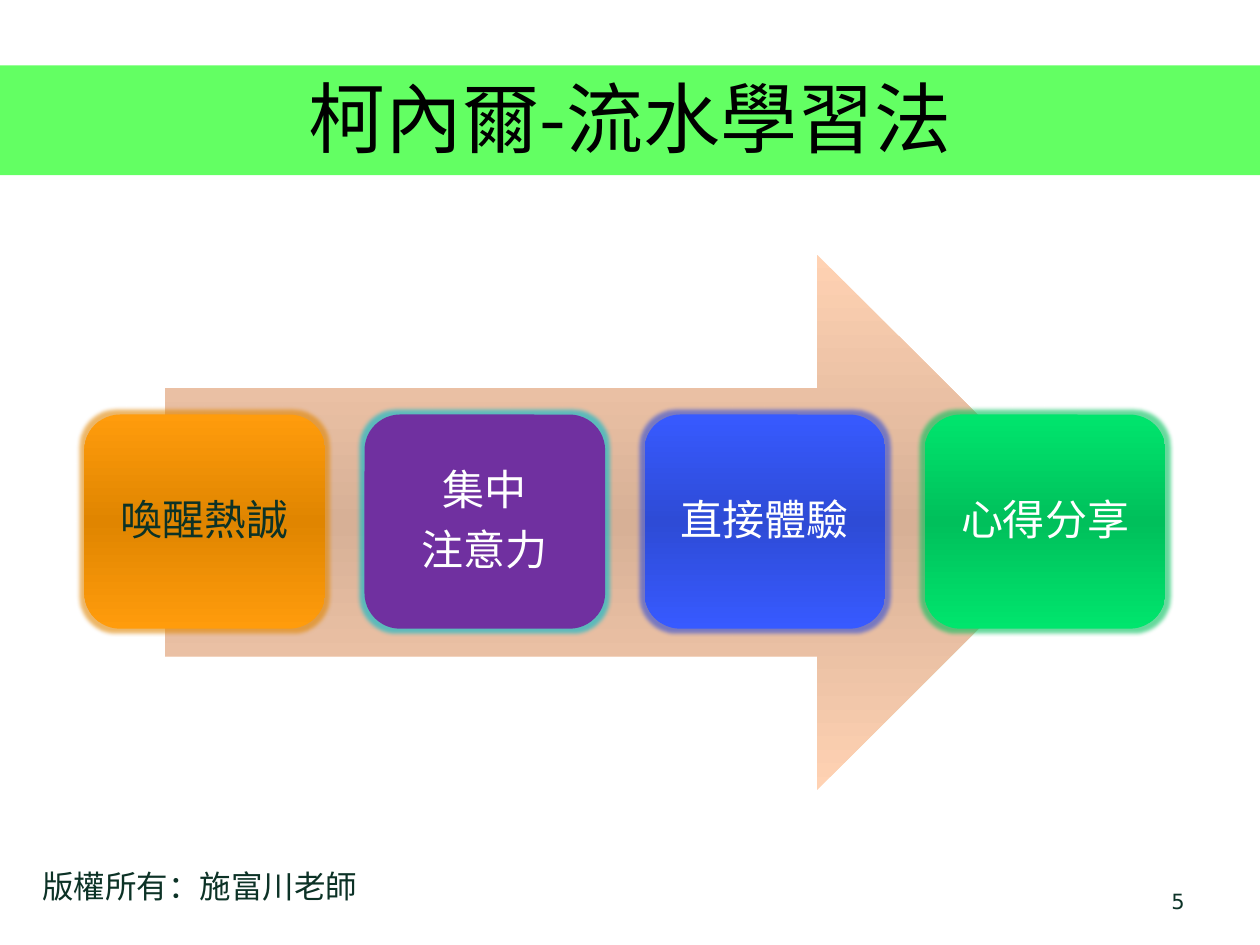
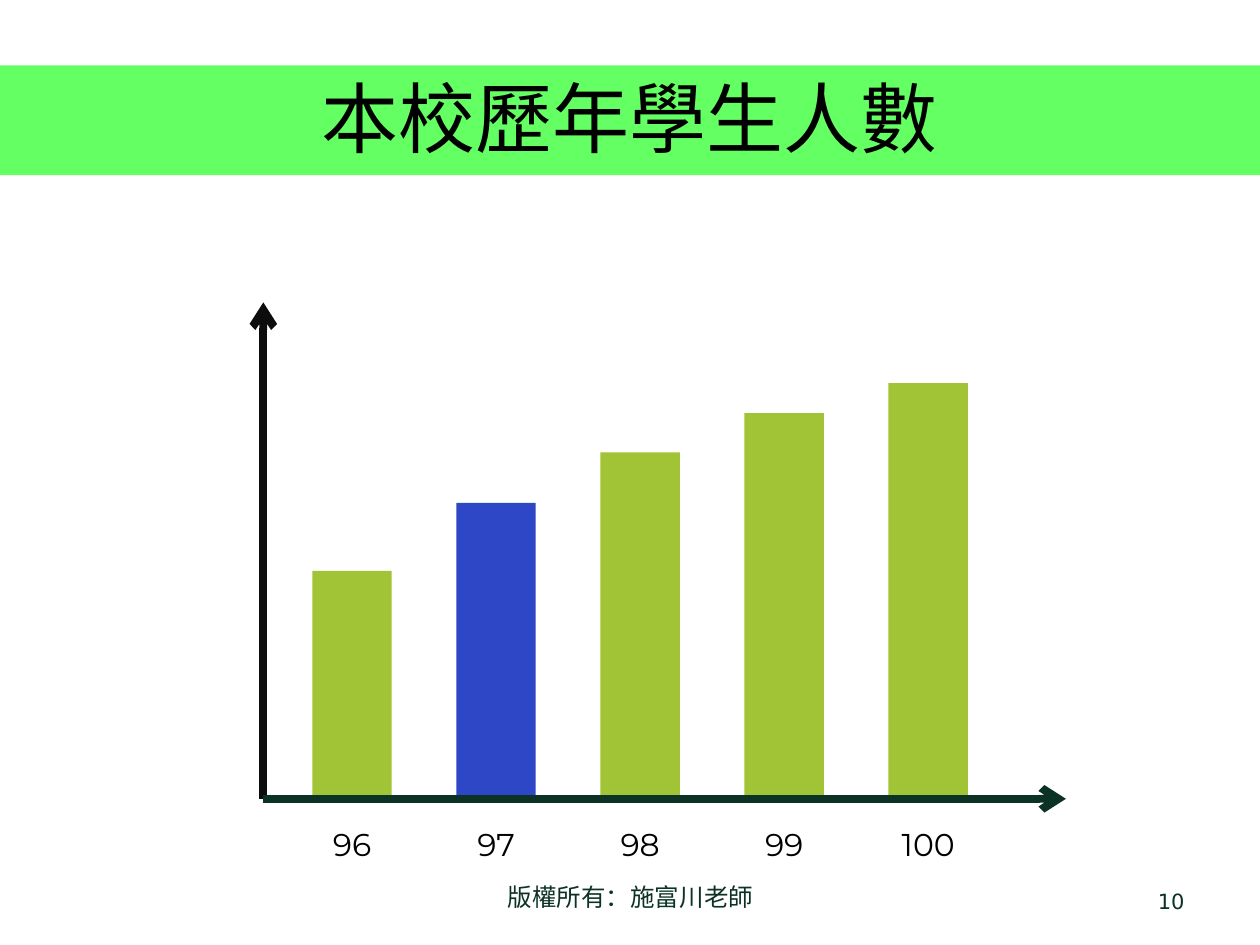
"""Build two slides: a four-step learning flow and a student head-count graph."""
import copy

import lxml.etree
import pptx
import pptx.dml.color
import pptx.enum.shapes
import pptx.enum.text
import pptx.oxml.ns
import pptx.util

RGBColor = pptx.dml.color.RGBColor
Shape = pptx.enum.shapes.MSO_SHAPE
Align = pptx.enum.text.PP_ALIGN
Anchor = pptx.enum.text.MSO_ANCHOR
qn = pptx.oxml.ns.qn

COLUMNS, ROWS = 100, 75
BLACK = RGBColor(0x00, 0x00, 0x00)
WHITE = RGBColor(0xFF, 0xFF, 0xFF)
INK = RGBColor(0x0C, 0x32, 0x26)
AXIS_BLACK = RGBColor(0x0D, 0x0D, 0x0D)
BAND_GREEN = RGBColor(0x00, 0xFF, 0x00)
PEACH = RGBColor(0xFF, 0xD2, 0xB3)
TAN = RGBColor(0xD7, 0xB0, 0x96)
ORANGE = RGBColor(0xFF, 0x9C, 0x0C)
DARK_ORANGE = RGBColor(0xE0, 0x85, 0x00)
PURPLE = RGBColor(0x70, 0x30, 0xA0)
CYAN = RGBColor(0x00, 0xB8, 0xCC)
BLUE = RGBColor(0x37, 0x5A, 0xFF)
DARK_BLUE = RGBColor(0x2E, 0x4B, 0xD6)
GREEN = RGBColor(0x00, 0xE5, 0x6D)
DARK_GREEN = RGBColor(0x00, 0xC0, 0x5B)
BAR_LIME = RGBColor(0xA0, 0xC4, 0x35)
BAR_BLUE = RGBColor(0x2D, 0x47, 0xC7)

HEADING_FONT = "Noto Sans CJK SC"
CARD_FONT = "Noto Sans CJK JP"
NUMBER_FONT = "DejaVu Sans"
LABEL_FONT = "Montserrat"
COPYRIGHT = "版權所有：施富川老師"


def add_element(parent, tag, **attributes):
    """Append a DrawingML element to its parent."""
    return lxml.etree.SubElement(parent, qn(tag), attributes)


def write_text(frame, text, font=HEADING_FONT, size=18, color=INK,
               align=Align.CENTER, anchor=Anchor.TOP, line_spacing=None, space_after=None):
    """Fill a text frame, one paragraph for each line of the text."""
    frame.word_wrap = True
    frame.vertical_anchor = anchor
    for index, line in enumerate(text.split("\n")):
        paragraph = frame.add_paragraph() if index else frame.paragraphs[0]
        paragraph.alignment = align
        paragraph.line_spacing = line_spacing
        paragraph.space_after = space_after
        run = paragraph.add_run()
        run.text = line
        run.font.size = pptx.util.Pt(size)
        run.font.color.rgb = color
        run.font.name = font
        add_element(run.font._element, "a:ea", typeface=font)


class Deck:
    """Hold the shared style and the current slide."""

    def __init__(self):
        """Start an empty 4:3 presentation."""
        self.presentation = pptx.Presentation()
        self.presentation.slide_width = pptx.util.Inches(10)
        self.presentation.slide_height = pptx.util.Inches(7.5)
        self.column = self.presentation.slide_width / COLUMNS
        self.row = self.presentation.slide_height / ROWS
        self.slide = None

    def place(self, *cells):
        """Turn alternating columns and rows into slide lengths."""
        return [round(cell * (self.row if index % 2 else self.column))
                for index, cell in enumerate(cells)]

    def new_slide(self, title, number):
        """Add a slide with its title band, title and page number."""
        self.slide = self.presentation.slides.add_slide(self.presentation.slide_layouts[6])
        band = self.shape(Shape.PARALLELOGRAM, (-2.8, 5.2, 106.3, 8.7), BAND_GREEN)
        band.adjustments[0] = 0.18
        tint = band._element.spPr.find(qn("a:solidFill"))[0]
        add_element(tint, "a:alpha", val="61000")
        self.text((5, 3, 90, 12.5), title, size=44, color=BLACK, anchor=Anchor.MIDDLE)
        self.text((71.7, 69.5, 23.3, 4), str(number), font=NUMBER_FONT, size=12,
                  align=Align.RIGHT, anchor=Anchor.MIDDLE)

    def text(self, cells, text, **style):
        """Add a text box."""
        box = self.slide.shapes.add_textbox(*self.place(*cells))
        write_text(box.text_frame, text, **style)

    def shape(self, kind, cells, color, middle=None):
        """Add a borderless shape, shaded towards the middle colour if given."""
        shape = self.slide.shapes.add_shape(kind, *self.place(*cells))
        shape.shadow.inherit = False
        shape.line.fill.background()
        if middle is None:
            shape.fill.solid()
            shape.fill.fore_color.rgb = color
            return shape
        shape.fill.gradient()
        shape.fill.gradient_angle = 90
        stop_list = shape._element.spPr.find(qn("a:gradFill")).find(qn("a:gsLst"))
        stop_list.insert(1, copy.deepcopy(stop_list[0]))
        for index, (stop, shade) in enumerate(
                zip(shape.fill.gradient_stops, (color, middle, color))):
            stop.position = index / 2
            stop.color.rgb = shade
        return shape

    def card(self, cells, text, color, middle, glow_color, text_color):
        """Add a glowing rounded card with centred text."""
        card = self.shape(Shape.ROUNDED_RECTANGLE, cells, color, middle)
        effects = card._element.spPr.find(qn("a:effectLst"))
        glow = add_element(effects, "a:glow", rad=str(pptx.util.Pt(5)))
        tint = add_element(glow, "a:srgbClr", val=str(glow_color))
        add_element(tint, "a:alpha", val="60000")
        write_text(card.text_frame, text, font=CARD_FONT, size=24, color=text_color,
                   anchor=Anchor.MIDDLE, line_spacing=0.9, space_after=pptx.util.Pt(8.4))

    def axis(self, start, end, color):
        """Add an axis with an arrowhead at its end."""
        axis = self.slide.shapes.add_connector(
            pptx.enum.shapes.MSO_CONNECTOR.STRAIGHT, *self.place(*start, *end))
        axis.line.color.rgb = color
        axis.line.width = pptx.util.Pt(4.5)
        add_element(axis.line._ln, "a:tailEnd", type="arrow")
        add_element(axis._element.spPr, "a:effectLst")


def build_learning_flow(deck):
    """Draw the four learning steps over a broad arrow."""
    deck.new_slide("柯內爾-流水學習法", 5)
    deck.text((0, 68.3, 31.7, 5.2), COPYRIGHT)
    deck.shape(Shape.RIGHT_ARROW, (13.1, 20.2, 73, 42.5), PEACH, TAN)
    steps = [
        ("喚醒熱誠", ORANGE, DARK_ORANGE, DARK_ORANGE, INK),
        ("集中\n注意力", PURPLE, None, CYAN, WHITE),
        ("直接體驗", BLUE, DARK_BLUE, DARK_BLUE, WHITE),
        ("心得分享", GREEN, DARK_GREEN, DARK_GREEN, WHITE),
    ]
    for index, step in enumerate(steps):
        deck.card((6.7 + 22.23 * index, 32.9, 19.1, 17), *step)


def build_student_graph(deck):
    """Draw the yearly student numbers as bars between two axes."""
    deck.new_slide("本校歷年學生人數", 10)
    deck.text((34.2, 69.5, 31.7, 4), COPYRIGHT, size=14)
    baseline, origin, bar_width = 63.4, 20.9, 6.3
    deck.axis((origin, baseline), (origin, 24), AXIS_BLACK)
    bar_heights = {"96": 18.1, "97": 23.5, "98": 27.5, "99": 30.6, "100": 33}
    for index, (year, height) in enumerate(bar_heights.items()):
        left = 24.8 + 11.43 * index
        color = BAR_BLUE if year == "97" else BAR_LIME
        deck.shape(Shape.RECTANGLE, (left, baseline - height, bar_width, height), color)
        overhang = 0.8 if len(year) > 2 else 0
        deck.text((left - overhang, 65, bar_width + 2 * overhang, 4), year,
                  font=LABEL_FONT, color=BLACK)
    deck.axis((origin, baseline), (84.6, baseline), INK)


def main():
    """Build both slides and save them."""
    deck = Deck()
    build_learning_flow(deck)
    build_student_graph(deck)
    deck.presentation.save("out.pptx")


if __name__ == "__main__":
    main()
